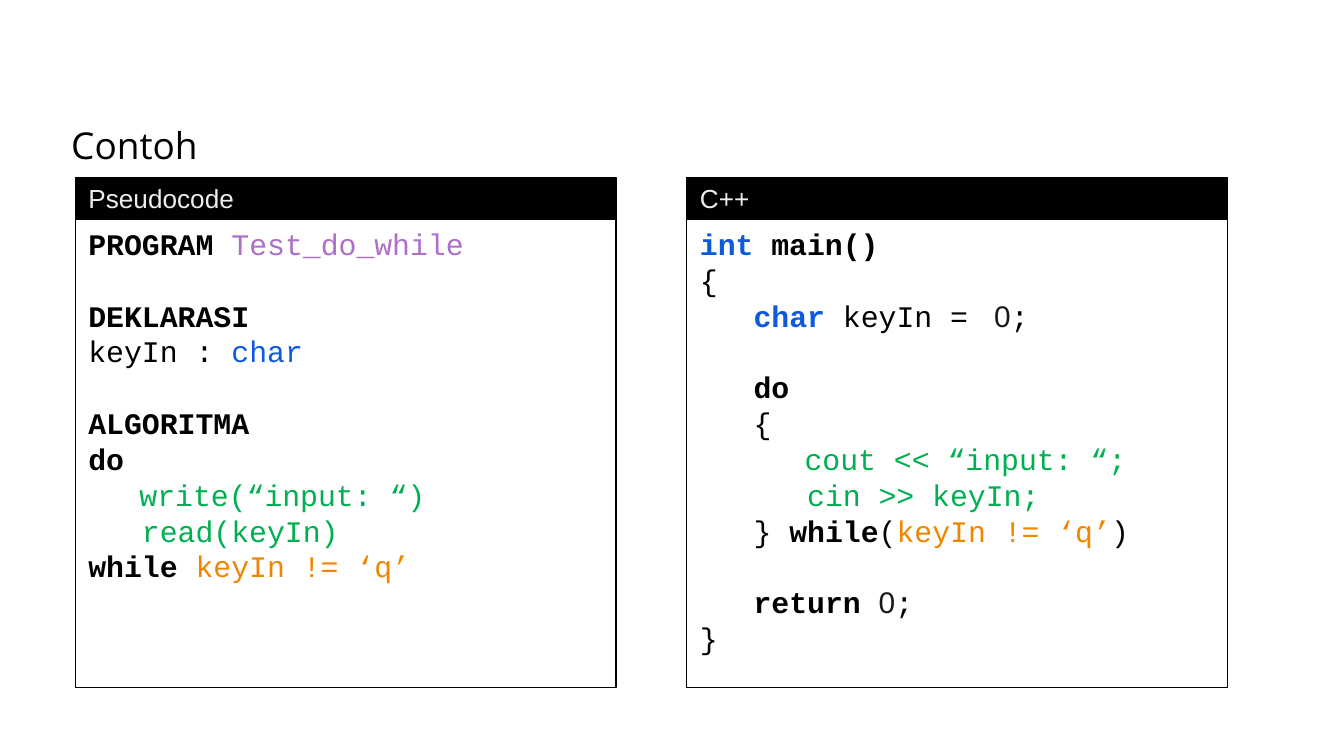
from pptx import Presentation
from pptx.dml.color import RGBColor
from pptx.enum.shapes import MSO_SHAPE as Shape
from pptx.enum.text import MSO_ANCHOR as Anchor, MSO_AUTO_SIZE as AutoSize, PP_ALIGN as Align
from pptx.util import Inches, Pt

BLACK, PURPLE, BLUE = "000000", "AE6FCC", "0D5BDC"
GREEN, ORANGE, DARK, PALE = "00B050", "EF8600", "191919", "EEEEEE"
PLAIN = (BLACK, False)
BOLD = (BLACK, True)
DIGIT = (DARK, False)

PSEUDOCODE = [
    [("PROGRAM ", BOLD), ("Test_do_while", (PURPLE, False))],
    [],
    [("DEKLARASI", BOLD)],
    [("keyIn : ", PLAIN), ("char", (BLUE, False))],
    [],
    [("ALGORITMA", BOLD)],
    [("do", BOLD)],
    [("\twrite(“input: “)", (GREEN, False))],
    [("   read(keyIn)", (GREEN, False))],
    [("while ", BOLD), ("keyIn != ‘q’", (ORANGE, False))],
]
CPP = [
    [("int ", (BLUE, True)), ("main()", BOLD)],
    [("{", PLAIN)],
    [("   char ", (BLUE, True)), ("keyIn = ", PLAIN), (" 0", DIGIT), (";", PLAIN)],
    [],
    [("   do", BOLD)],
    [("   {", PLAIN)],
    [("\t   cout << “input: “;", (GREEN, False))],
    [("      cin >> keyIn;", (GREEN, False))],
    [("   } ", PLAIN), ("while", BOLD), ("(", PLAIN),
     ("keyIn != ‘q’", (ORANGE, False)), (")", PLAIN)],
    [],
    [("   return ", BOLD), ("0", DIGIT), (";", PLAIN)],
    [("}", PLAIN)],
]


def color(value):
    return RGBColor.from_string(value)


class CodeSlide:
    title_font, label_font, code_font = "Open Sans", "Arial", "Courier New"
    title_size, label_size, code_size = 19.8, 14, 16
    blank_line = Pt(19.2)
    hanging = Inches(0.38)

    def __init__(self, deck):
        self.column = deck.slide_width / 100
        self.row = deck.slide_height / 56.25
        self.slide = deck.slides.add_slide(deck.slide_layouts[5])

    def place(self, left, top, width, height):
        return (round(left * self.column), round(top * self.row),
                round(width * self.column), round(height * self.row))

    def style(self, font, name, size, value, bold=False):
        font.name, font.size, font.bold = name, Pt(size), bold
        font.color.rgb = color(value)

    def title(self, text, *area):
        box = self.slide.shapes.title
        box.left, box.top, box.width, box.height = self.place(*area)
        frame = box.text_frame
        frame.text = text
        frame.auto_size = AutoSize.NONE
        frame.vertical_anchor = Anchor.TOP
        frame.margin_left = frame.margin_right = Inches(0.1)
        frame.margin_top = frame.margin_bottom = Inches(0.1)
        para = frame.paragraphs[0]
        para.alignment = Align.LEFT
        self.style(para.runs[0].font, self.title_font, self.title_size, BLACK)

    def box(self, area, anchor, fill=None):
        box = self.slide.shapes.add_shape(Shape.RECTANGLE, *self.place(*area))
        box.shadow.inherit = False
        if fill:
            box.fill.solid()
            box.fill.fore_color.rgb = color(fill)
        else:
            box.fill.background()
        box.line.color.rgb = color(BLACK)
        box.line.width = Pt(0.75)
        box.text_frame.word_wrap = True
        box.text_frame.vertical_anchor = anchor
        return box.text_frame

    def label(self, text, *area):
        frame = self.box(area, Anchor.MIDDLE, BLACK)
        frame.text = text
        para = frame.paragraphs[0]
        para.alignment = Align.LEFT
        self.style(para.runs[0].font, self.label_font, self.label_size, PALE)

    def code(self, lines, *area):
        frame = self.box(area, Anchor.TOP)
        para, gap = frame.paragraphs[0], False
        for line in lines:
            if not line:
                gap = True
                continue
            if para.runs:
                para = frame.add_paragraph()
            para.alignment = Align.LEFT
            if gap:
                para.space_before, gap = self.blank_line, False
            if line[0][0].startswith("\t"):
                properties = para._p.get_or_add_pPr()
                properties.set("marL", str(self.hanging))
                properties.set("indent", str(-self.hanging))
            for text, (value, bold) in line:
                span = para.add_run()
                span.text = text
                name = self.label_font if (value, bold) == DIGIT else self.code_font
                self.style(span.font, name, self.code_size, value, bold)


def main():
    deck = Presentation()
    deck.slide_width = Inches(10)
    deck.slide_height = deck.slide_width * 9 // 16
    page = CodeSlide(deck)
    page.title("Contoh", 4.3, 8.1, 91.4, 4.3)
    for index, (name, lines) in enumerate([("Pseudocode", PSEUDOCODE), ("C++", CPP)]):
        left = 5.6 + 45.5 * index
        page.code(lines, left, 16.3, 40.25, 34.85)
        page.label(name, left, 13.2, 40.25, 3.1)
    deck.save("out.pptx")


if __name__ == "__main__":
    main()
